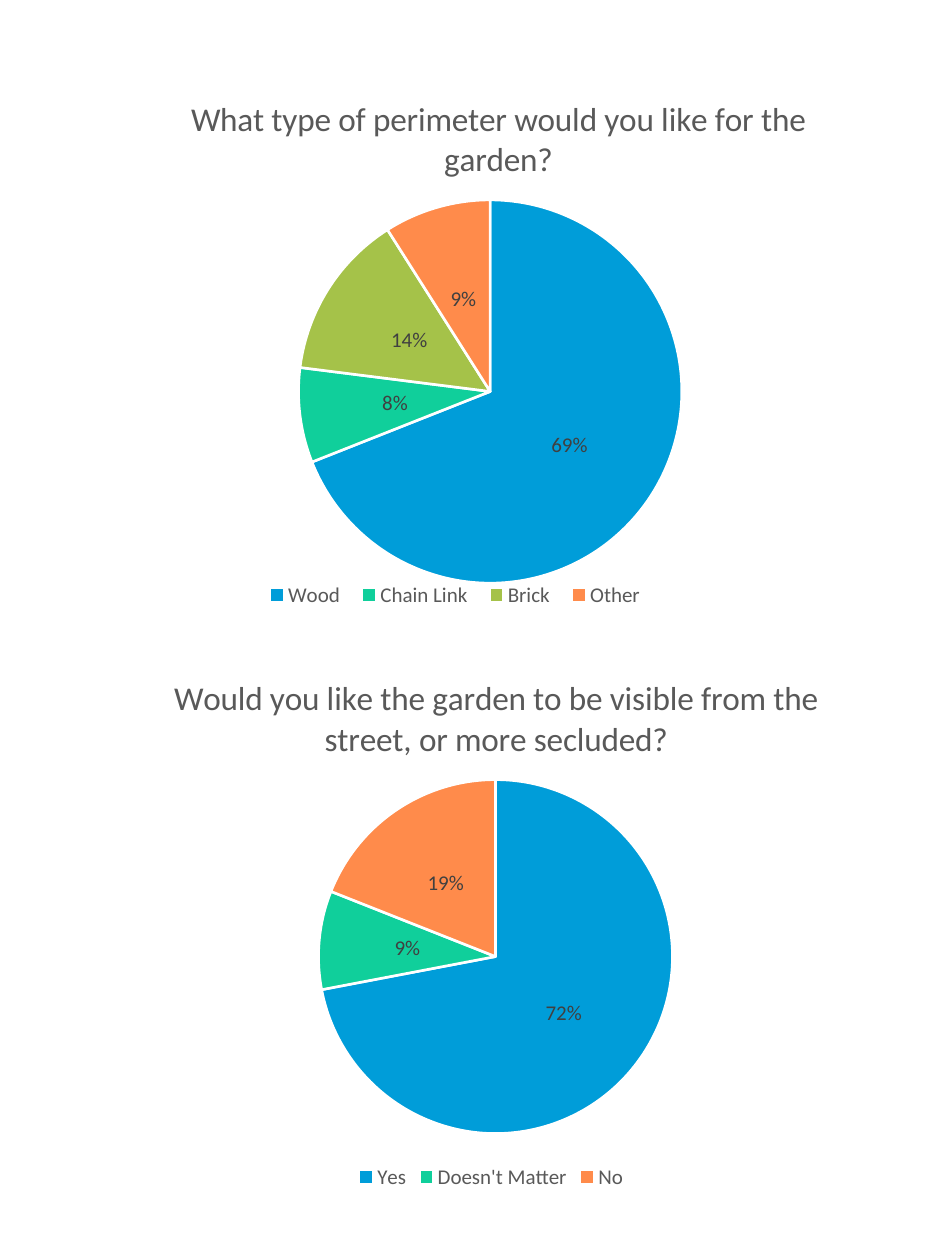
from dataclasses import dataclass
from typing import Optional

from lxml.etree import QName, SubElement
from pptx import Presentation
from pptx.chart.data import CategoryChartData
from pptx.dml.color import RGBColor
from pptx.enum.chart import XL_CHART_TYPE, XL_LABEL_POSITION, XL_LEGEND_POSITION
from pptx.oxml import parse_xml
from pptx.oxml.ns import nsdecls, qn
from pptx.util import Pt

BLUE = RGBColor(0x00, 0x9D, 0xD9)
TEAL = RGBColor(0x10, 0xCF, 0x9B)
GREEN = RGBColor(0xA5, 0xC2, 0x49)
ORANGE = RGBColor(0xFF, 0x8B, 0x4B)
WHITE = RGBColor(0xFF, 0xFF, 0xFF)
LABEL_GRAY = RGBColor(0x40, 0x40, 0x40)
TEXT_GRAY = RGBColor(0x59, 0x59, 0x59)

TITLE_FORMAT = {"name": "Calibri", "size": Pt(19), "bold": False}
TEXT_FORMAT = {"name": "Calibri", "size": Pt(12), "bold": False}


@dataclass
class Answer:
    name: str
    percent: int
    color: RGBColor


@dataclass
class SurveyQuestion:
    """Box is in points; the layouts are fractions of the chart."""
    text: str
    box: tuple[float, float, float, float]
    answers: list[Answer]
    title_layout: dict[str, float]
    pie_layout: dict[str, float]
    legend_layout: Optional[dict[str, float]] = None


QUESTIONS = [
    SurveyQuestion(
        "Would you like the garden to be visible from the street, or more secluded?",
        (43.9, 366.5, 473.8, 316.1),
        [Answer("Yes", 72, BLUE), Answer("Doesn't Matter", 9, TEAL), Answer("No", 19, ORANGE)],
        {"x": 0.11, "y": 0.05},
        {"x": 0.29, "y": 0.25, "w": 0.43, "h": 0.64},
    ),
    SurveyQuestion(
        "What type of perimeter would you like for the garden?",
        (31, 34.6, 498.2, 331.9),
        [Answer("Wood", 69, BLUE), Answer("Chain Link", 8, TEAL),
         Answer("Brick", 14, GREEN), Answer("Other", 9, ORANGE)],
        {"x": 0.15, "y": 0.05},
        {"x": 0.28, "y": 0.24, "w": 0.44, "h": 0.66},
        {"x": 0.23, "y": 0.89, "w": 0.46, "h": 0.06},
    ),
]


def format_font(font, values: dict, color: RGBColor) -> None:
    for name, value in values.items():
        setattr(font, name, value)
    font.color.rgb = color


def set_layout(element, fractions: dict[str, float]) -> None:
    """Give a chart part a fixed place, as fractions of the chart."""
    for old_layout in element.findall(qn("c:layout")):
        element.remove(old_layout)
    layout = parse_xml(f"<c:layout {nsdecls('c')}/>")
    manual = SubElement(layout, qn("c:manualLayout"))
    if QName(element).localname == "plotArea":
        SubElement(manual, qn("c:layoutTarget"), val="inner")
    for side in ("x", "y"):
        SubElement(manual, qn(f"c:{side}Mode"), val="edge")
    for side, fraction in fractions.items():
        SubElement(manual, qn(f"c:{side}"), val=str(fraction))
    leading = [child for child in element
               if QName(child).localname in ("tx", "legendPos", "legendEntry")]
    element.insert(len(leading), layout)


def add_pie(slide, question: SurveyQuestion) -> None:
    data = CategoryChartData()
    data.categories = [answer.name for answer in question.answers]
    data.add_series("Series 1", [answer.percent for answer in question.answers])
    box = [Pt(length) for length in question.box]
    chart = slide.shapes.add_chart(XL_CHART_TYPE.PIE, *box, data).chart
    format_font(chart.font, TEXT_FORMAT, TEXT_GRAY)

    title_frame = chart.chart_title.text_frame
    title_frame.text = question.text
    format_font(title_frame.paragraphs[0].runs[0].font, TITLE_FORMAT, TEXT_GRAY)
    set_layout(chart.chart_title._element, question.title_layout)

    plot = chart.plots[0]
    plot.vary_by_categories = True
    set_layout(plot._element.getparent(), question.pie_layout)
    for index, answer in enumerate(question.answers):
        point_format = plot.series[0].points[index].format
        point_format.fill.solid()
        point_format.fill.fore_color.rgb = answer.color
        point_format.line.color.rgb = WHITE
        point_format.line.width = Pt(1.5)

    labels = plot.series[0].data_labels
    labels.show_value = False
    labels.show_percentage = True
    labels.number_format = "0%"
    labels.number_format_is_linked = False
    labels.position = XL_LABEL_POSITION.CENTER
    format_font(labels.font, TEXT_FORMAT, LABEL_GRAY)

    chart.has_legend = True
    legend = chart.legend
    legend.position = XL_LEGEND_POSITION.BOTTOM
    legend.include_in_layout = False
    format_font(legend.font, TEXT_FORMAT, TEXT_GRAY)
    if question.legend_layout:
        set_layout(legend._element, question.legend_layout)


def main() -> None:
    presentation = Presentation()
    presentation.slide_width = Pt(540)
    presentation.slide_height = Pt(720)
    slide = presentation.slides.add_slide(presentation.slide_layouts[6])
    for question in QUESTIONS:
        add_pie(slide, question)
    presentation.save("out.pptx")


if __name__ == "__main__":
    main()
